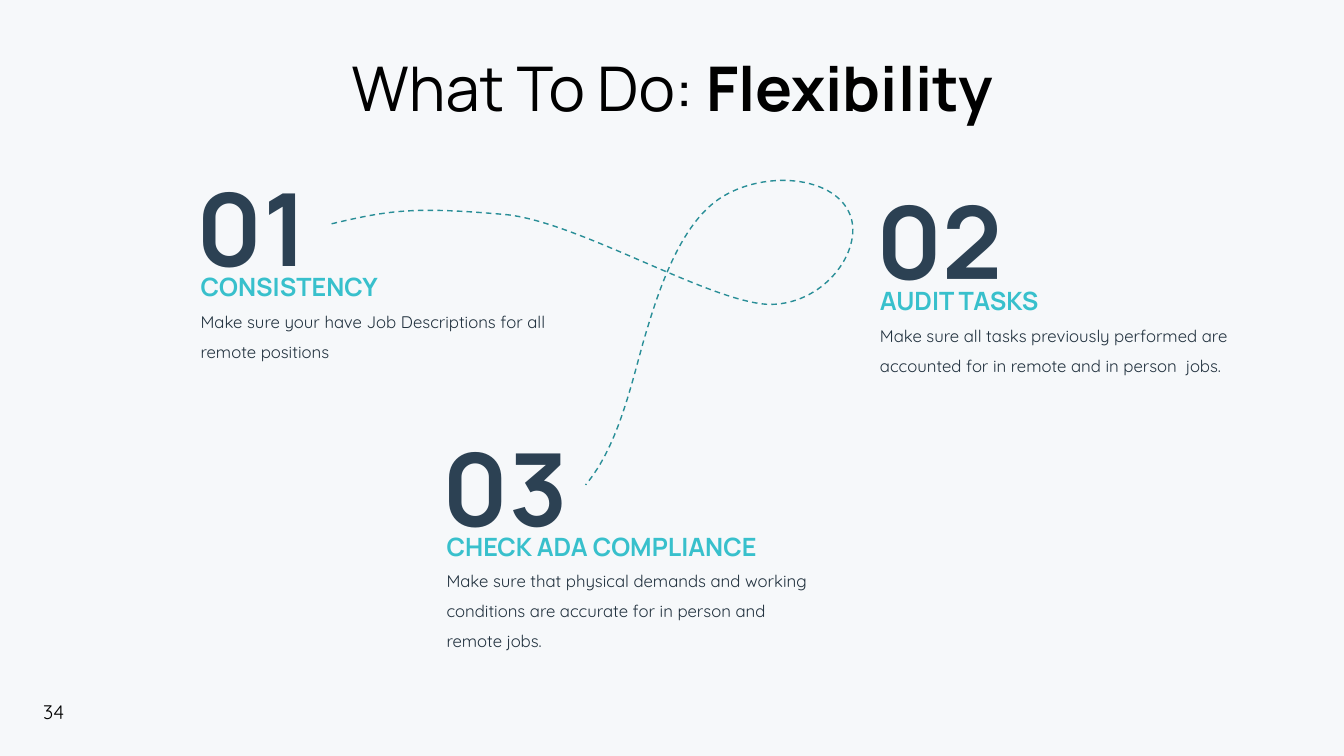
from pptx import Presentation
from pptx.dml.color import RGBColor
from pptx.enum.dml import MSO_LINE_DASH_STYLE as Dash
from pptx.enum.shapes import MSO_SHAPE as Preset
from pptx.enum.text import MSO_ANCHOR as Anchor, MSO_AUTO_SIZE as AutoSize, PP_ALIGN as Align
from pptx.oxml.ns import qn
from pptx.oxml.xmlchemy import OxmlElement
from pptx.util import Inches, Pt

# The slide is a grid of 80 columns by 45 rows of square cells
COLUMNS, ROWS = 80, 45
CELL = Inches(7.5) // ROWS

COLORS = {
    "background": "F6F8FA",
    "black": "000000",
    "number": "2C4153",
    "heading": "38C0CC",
    "body": "21313E",
    "curve": "298E97",
}
HEADING_FONT, BODY_FONT = "Manrope", "Quicksand"

# Column; rows of number, heading and body; heading width; body height;
# whether the body is a filled panel; number, heading and body text
STEPS = [
    (11.94, (8.34, 15.78, 17.94), 10.86, 3.42, True, "01", "CONSISTENCY",
     "Make sure your have Job Descriptions for all remote positions"),
    (52.38, (9.12, 16.62, 18.78), 11.16, 3.42, False, "02", "AUDIT TASKS",
     "Make sure all tasks previously performed are accounted for in remote "
     "and in person  jobs."),
    (26.58, (23.82, 31.26, 33.36), 20.1, 5.22, True, "03", "CHECK ADA COMPLIANCE",
     "Make sure that physical demands and working conditions are accurate "
     "for in person and remote jobs."),
]

# Start of the looping curve, then three points for each Bezier segment
CURVE = [
    (19.74, 13.32),
    (23.28, 12.48), (24.74, 12.3), (30.18, 12.78),
    (34.56, 13.26), (42.48, 18.12), (45.9, 18.12),
    (49.26, 18.06), (51.54, 14.64), (50.52, 12.6),
    (49.5, 10.5), (45.6, 10.14), (43.02, 11.7),
    (40.44, 13.26), (39.12, 17.52), (38.28, 20.4),
    (37.5, 23.22), (36.72, 26.64), (34.86, 28.86),
]


def cells(count):
    return round(count * CELL)


def color(name):
    return RGBColor.from_string(COLORS[name])


def place(shape, column, row, width, height):
    shape.left, shape.top = cells(column), cells(row)
    shape.width, shape.height = cells(width), cells(height)


def clear_margins(frame):
    frame.margin_left = frame.margin_right = 0
    frame.margin_top = frame.margin_bottom = 0


def format_run(run, font, size, color_name, bold=False):
    run.font.name, run.font.size, run.font.bold = font, Pt(size), bold
    run.font.color.rgb = color(color_name)


def add_panel(slide, box):
    panel = slide.shapes.add_shape(Preset.RECTANGLE, *map(cells, box))
    panel.shadow.inherit = False
    panel.fill.solid()
    panel.fill.fore_color.rgb = color("background")
    panel.line.fill.background()
    return panel


def add_text(slide, box, text, style, spacing=1.0, anchor=Anchor.TOP, filled=False):
    if filled:
        shape = add_panel(slide, box)
    else:
        shape = slide.shapes.add_textbox(*map(cells, box))
    frame = shape.text_frame
    frame.word_wrap = True
    frame.auto_size = AutoSize.SHAPE_TO_FIT_TEXT
    frame.vertical_anchor = anchor
    frame.text = text
    paragraph = frame.paragraphs[0]
    paragraph.alignment = Align.LEFT
    paragraph.line_spacing = spacing
    format_run(paragraph.runs[0], *style)
    return shape


def add_title(slide):
    title = slide.shapes.title
    place(title, 4.32, 3.48, 71.4, 3.9)
    frame = title.text_frame
    clear_margins(frame)
    frame.auto_size = AutoSize.NONE
    frame.vertical_anchor = Anchor.MIDDLE
    paragraph = frame.paragraphs[0]
    paragraph.alignment = Align.CENTER
    paragraph.line_spacing = 0.9
    for text, bold in (("What To Do: ", False), ("Flexibility", True)):
        run = paragraph.add_run()
        run.text = text
        format_run(run, HEADING_FONT, 44, "black", bold)


def add_curve(slide, points):
    start, *others = [(cells(x), cells(y)) for x, y in points]
    builder = slide.shapes.build_freeform(*start)
    builder.add_line_segments(others, close=False)
    curve = builder.convert_to_shape()
    curve.shadow.inherit = False
    curve.fill.background()
    curve.line.color.rgb = color("curve")
    curve.line.width = Pt(1)
    curve.line.dash_style = Dash.DASH
    # Turn each three straight segments into one Bezier segment
    outline = next(curve.element.iter(qn("a:path")))
    segments = outline.findall(qn("a:lnTo"))
    for first in range(0, len(segments), 3):
        bezier = OxmlElement("a:cubicBezTo")
        outline.append(bezier)
        for segment in segments[first:first + 3]:
            bezier.append(segment[0])
            outline.remove(segment)


def add_step(slide, column, rows, heading_width, body_height, filled,
             number, heading, body):
    number_row, heading_row, body_row = rows
    number_box = add_text(slide, (column - 0.22, number_row, 20.34, 8.7), number,
                          (HEADING_FONT, 72, "number", True), 1.2, Anchor.BOTTOM)
    heading_box = add_text(slide, (column, heading_row, heading_width, 2.1), heading,
                           (HEADING_FONT, 18, "heading", True), 1.2)
    body_box = add_text(slide, (column, body_row, 21.72, body_height), body,
                        (BODY_FONT, 12, "body"), 1.5, filled=filled)
    for shape in (number_box, heading_box, body_box):
        clear_margins(shape.text_frame)


def main():
    presentation = Presentation()
    presentation.slide_width = COLUMNS * CELL
    presentation.slide_height = ROWS * CELL
    slide = presentation.slides.add_slide(presentation.slide_layouts[5])
    background = slide.background.fill
    background.solid()
    background.fore_color.rgb = color("background")

    # Page number and title
    add_text(slide, (1.98, 41.36, 8.76, 2.04), "34", (BODY_FONT, 14, "black"))
    add_title(slide)

    # Curve and the three steps it links
    add_curve(slide, CURVE)
    for step in STEPS:
        add_step(slide, *step)

    presentation.save("out.pptx")


if __name__ == "__main__":
    main()
